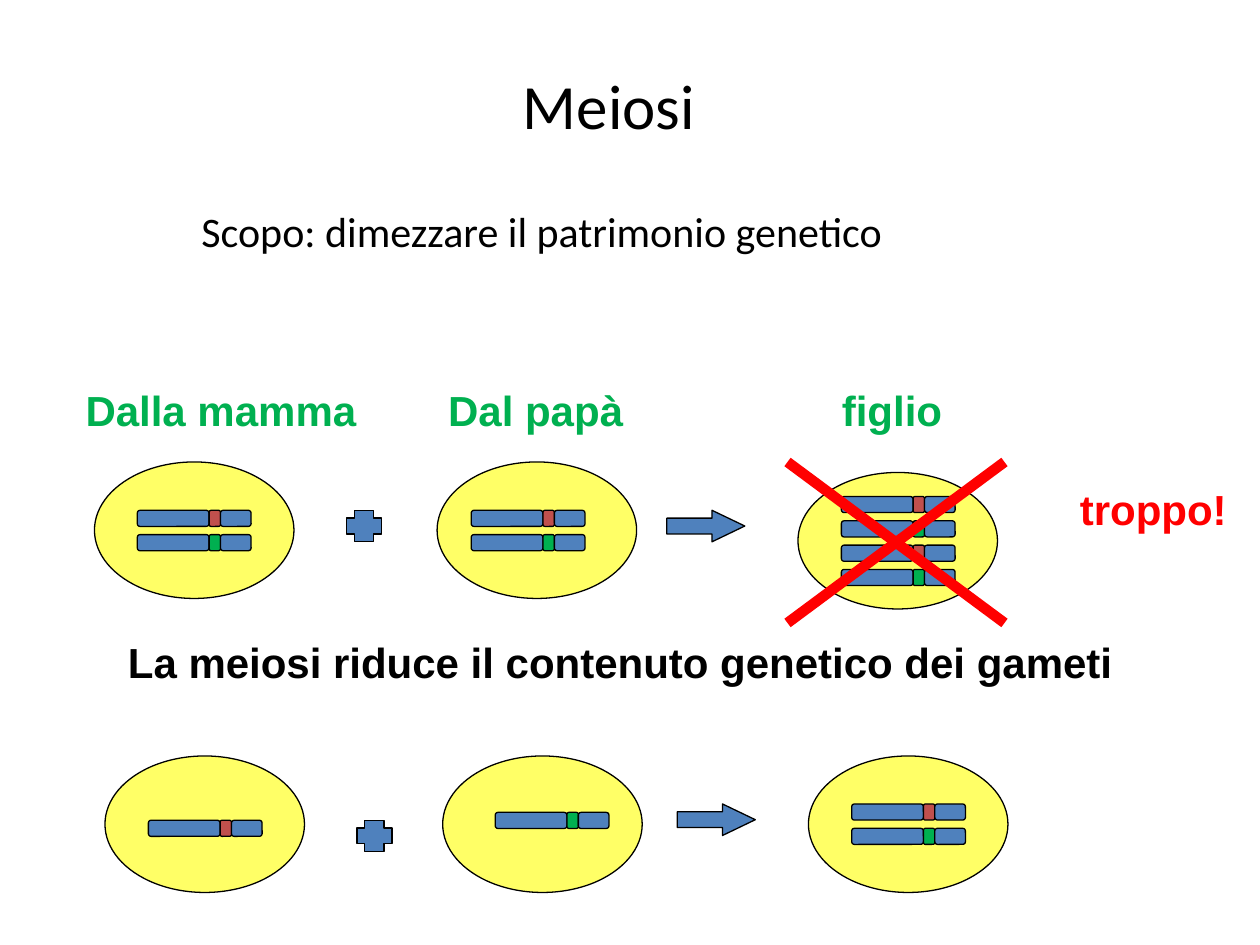
import pptx
import pptx.util
import pptx.dml.color
import pptx.enum.shapes
import pptx.enum.text
import pptx.oxml.ns
from lxml import etree

Pt = pptx.util.Pt
SHAPE = pptx.enum.shapes.MSO_SHAPE

COLORS = {
    "black": "000000", "green": "00B050", "red": "FF0000",
    "cell": "FFFF66", "blue": "4F81BD", "brick": "C0504D",
}
TITLE = "Meiosi"
PURPOSE = "Scopo: dimezzare il patrimonio genetico"

CELL = (114, 78)
PLUS = (20, 18)
ARROW = (44.6, 18)
BAND_H, BAND_PITCH = 9.2, 13.9
LONG_ARM, LOCUS, SHORT_ARM = 41, 6.5, 17.5
PAIR = ["brick", "green"]

# Each group: labels (text, x, y, width, colour), cells (x, y,
# chromosome x, chromosome y, locus colours), pluses and arrows (x, y),
# strokes (x1, y1, x2, y2)
GROUPS = [
    {"cells": [(462, 432, 486.7, 459.4, PAIR)]},
    {
        "labels": [("Dalla mamma", 41.8, 216, 170.6, "green"),
                   ("Dal papà", 249, 216, 114.5, "green"),
                   ("figlio", 474, 216, 72, "green")],
        "cells": [(249.8, 264, 269.3, 291.6, PAIR),
                  (54, 264, 78.5, 291.6, PAIR)],
        "pluses": [(198, 291.6)],
        "arrows": [(381, 291.6)],
    },
    {
        "cells": [(60, 432, 84.8, 468.7, ["brick"]),
                  (253, 432, 283, 464.2, ["green"])],
        "arrows": [(387, 459.4)],
        "pluses": [(204, 468.7)],
        "labels": [("La meiosi riduce il contenuto genetico dei gameti",
                    66, 360, 577.4, "black")],
    },
    {
        "cells": [(456, 270, 480.8, 283.7, PAIR * 2)],
        "strokes": [(450, 264, 574, 356), (574, 264, 450, 356)],
        "labels": [("troppo!", 610, 273, 98.6, "red")],
    },
]


def rgb(name):
    return pptx.dml.color.RGBColor.from_string(COLORS[name])


def add_run(p, text, font, size, color="black", bold=False):
    r = p.add_run()
    r.text = text
    r.font.name = font
    r.font.size = Pt(size)
    r.font.bold = bold
    r.font.color.rgb = rgb(color)


def add_shape(shapes, kind, x, y, size, fill, adjustments=()):
    sp = shapes.add_shape(kind, Pt(x), Pt(y), Pt(size[0]), Pt(size[1]))
    sp.shadow.inherit = False
    sp.fill.solid()
    sp.fill.fore_color.rgb = rgb(fill)
    sp.line.color.rgb = rgb("black")
    sp.line.width = Pt(0.75)
    for i, value in enumerate(adjustments):
        sp.adjustments[i] = value


def add_chromosome(shapes, x, y, locus_color):
    for width, color in ((LONG_ARM, "blue"), (LOCUS, locus_color),
                         (SHORT_ARM, "blue")):
        add_shape(shapes, SHAPE.ROUNDED_RECTANGLE, x, y, (width, BAND_H),
                  color, [0.167])
        x += width


def add_cell(shapes, x, y, chrom_x, chrom_y, loci):
    add_shape(shapes, SHAPE.OVAL, x, y, CELL, "cell")
    for i, color in enumerate(loci):
        add_chromosome(shapes, chrom_x, chrom_y + i * BAND_PITCH, color)


def add_label(shapes, text, x, y, width, color):
    tf = shapes.add_textbox(Pt(x), Pt(y), Pt(width), Pt(36)).text_frame
    tf.word_wrap = False
    tf.auto_size = pptx.enum.text.MSO_AUTO_SIZE.SHAPE_TO_FIT_TEXT
    add_run(tf.paragraphs[0], text, "Arial", 24, color, True)


def add_stroke(shapes, x1, y1, x2, y2):
    line = shapes.add_connector(pptx.enum.shapes.MSO_CONNECTOR.STRAIGHT,
                                Pt(x1), Pt(y1), Pt(x2), Pt(y2))
    line.line.color.rgb = rgb("red")
    line.line.width = Pt(6)
    etree.SubElement(line._element.spPr, pptx.oxml.ns.qn("a:effectLst"))


def add_group(s, content):
    shapes = s.shapes.add_group_shape().shapes
    for cell in content.get("cells", []):
        add_cell(shapes, *cell)
    for x, y in content.get("pluses", []):
        add_shape(shapes, SHAPE.CROSS, x, y, PLUS, "blue", [0.25])
    for x, y in content.get("arrows", []):
        add_shape(shapes, SHAPE.RIGHT_ARROW, x, y, ARROW, "blue", [0.5, 1.04])
    for stroke in content.get("strokes", []):
        add_stroke(shapes, *stroke)
    for label in content.get("labels", []):
        add_label(shapes, *label)


def main():
    prs = pptx.Presentation()
    prs.slide_width, prs.slide_height = Pt(720), Pt(540)
    s = prs.slides.add_slide(prs.slide_layouts[5])

    title = s.shapes.title
    title.left, title.top, title.width, title.height = map(
        Pt, (42, 30, 612, 90))
    tf = title.text_frame
    tf.vertical_anchor = pptx.enum.text.MSO_ANCHOR.MIDDLE
    tf.margin_bottom = Pt(34)
    tf.paragraphs[0].alignment = pptx.enum.text.PP_ALIGN.CENTER
    add_run(tf.paragraphs[0], TITLE, "Calibri", 36)

    tf = s.shapes.add_textbox(Pt(108), Pt(114), Pt(612), Pt(90)).text_frame
    tf.word_wrap = True
    add_run(tf.paragraphs[0], PURPOSE, "Calibri", 24)

    for content in GROUPS:
        add_group(s, content)
    prs.save("out.pptx")


if __name__ == "__main__":
    main()
